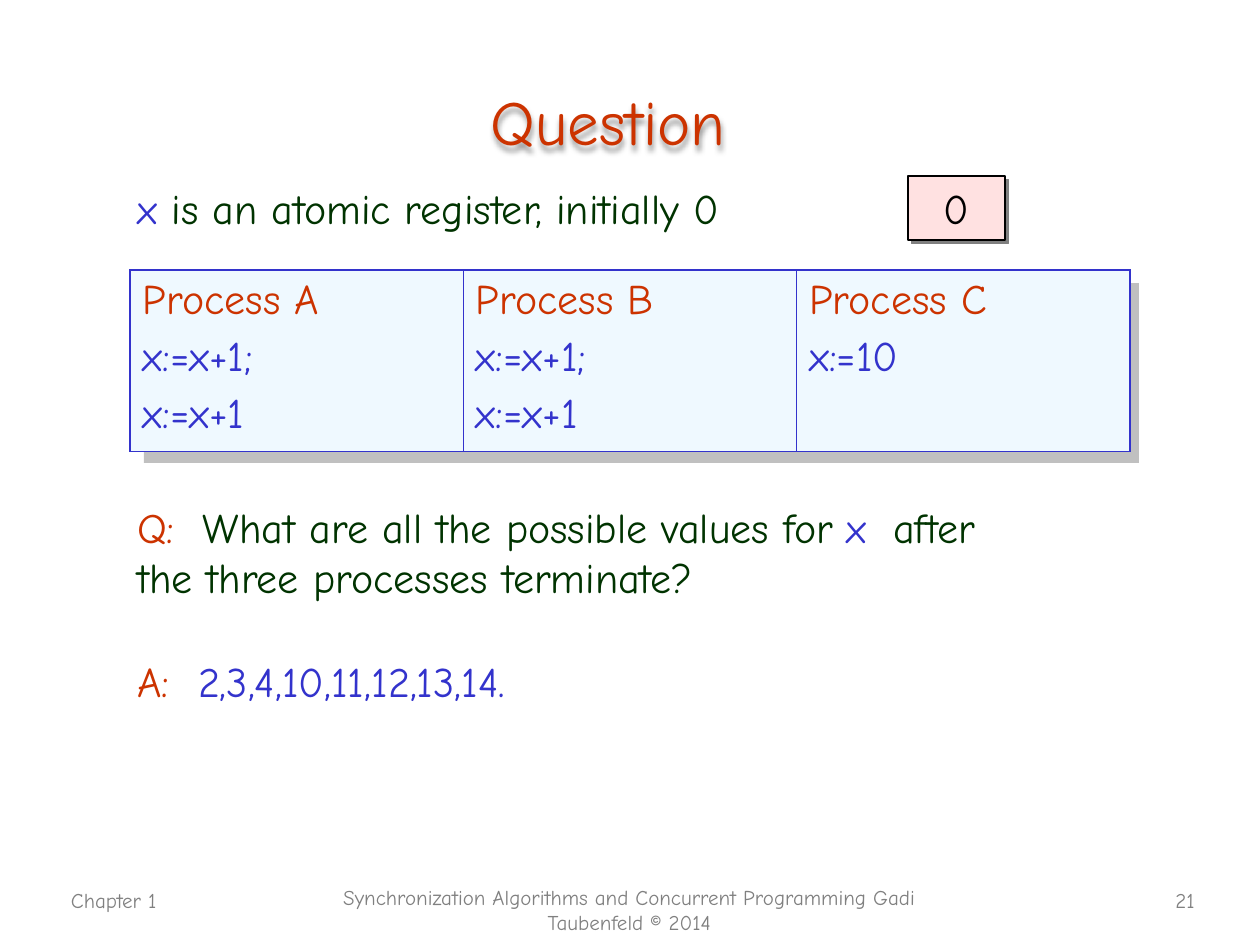
from dataclasses import dataclass
from lxml.etree import SubElement as Sub
from pptx import Presentation
from pptx.dml.color import RGBColor as Rgb
from pptx.enum.shapes import MSO_SHAPE as Kind
from pptx.enum.text import MSO_ANCHOR as Anchor, PP_ALIGN as Align
from pptx.oxml.ns import qn
from pptx.util import Pt


@dataclass(frozen=True)
class Theme:
    font: str = "Comic Neue"
    red: str = "CC3300"
    blue: str = "3333CC"
    green: str = "003300"
    gray: str = "808080"
    black: str = "000000"
    pale: str = "EFF9FF"
    pink: str = "FFE1E1"
    shade: str = "C0C0C0"
    head: int = 36
    body: int = 24
    small: int = 12


T = Theme()


def px(n):
    return round(n * 914400 / 126)


def write(par, parts, size=T.body, align=Align.LEFT, gap=0):
    par.alignment = align
    par.space_before = Pt(gap)
    for text, color in parts:
        run = par.add_run()
        run.text = text
        run.font.name = T.font
        run.font.size = Pt(size)
        run.font.color.rgb = Rgb.from_string(color)


def label(slide, box, parts, size=T.body, align=Align.LEFT, gap=0,
          inset=12, stops=(), anchor=Anchor.TOP):
    shape = slide.shapes.add_textbox(*map(px, box))
    frame = shape.text_frame
    frame.word_wrap = True
    frame.vertical_anchor = anchor
    frame.margin_left = px(inset)
    par = frame.paragraphs[0]
    write(par, parts, size, align, gap)
    if stops:
        tabs = Sub(par._p.get_or_add_pPr(), qn("a:tabLst"))
        for stop in stops:
            Sub(tabs, qn("a:tab"), pos=str(px(stop)), algn="l")
    return shape


def block(slide, box, fill):
    shape = slide.shapes.add_shape(Kind.RECTANGLE, *map(px, box))
    shape.shadow.inherit = False
    shape.fill.solid()
    shape.fill.fore_color.rgb = Rgb.from_string(fill)
    shape.line.fill.background()
    return shape


def shadow(shape, color, blur, dist, angle, alpha):
    shape.shadow.inherit = False
    effects = shape._element.spPr.find(qn("a:effectLst"))
    outer = Sub(effects, qn("a:outerShdw"), blurRad=str(Pt(blur)),
                dist=str(Pt(dist)), dir=str(angle * 60000),
                algn="ctr", rotWithShape="0")
    tone = Sub(outer, qn("a:srgbClr"), val=color)
    Sub(tone, qn("a:alpha"), val=str(alpha * 1000))


def frame_cell(cell):
    props = cell._tc.get_or_add_tcPr()
    for side in ("lnL", "lnR", "lnT", "lnB"):
        line = Sub(props, qn("a:" + side), w=str(Pt(1)))
        Sub(Sub(line, qn("a:solidFill")), qn("a:srgbClr"), val=T.blue)
    cell.fill.solid()
    cell.fill.fore_color.rgb = Rgb.from_string(T.pale)


def title(slide, box):
    shape = label(slide, box, [("Question", T.red)], T.head,
                  Align.CENTER, anchor=Anchor.MIDDLE)
    shadow(shape, T.black, 3, 3, 90, 40)


def register(slide, box):
    x, y, w, h = box
    label(slide, (x, y, w, 55),
          [("x", T.blue), (" is an atomic register, initially 0", T.green)],
          gap=5)
    cell = block(slide, (x + 782, y, 97, h), T.pink)
    cell.line.color.rgb = Rgb.from_string(T.black)
    cell.line.width = Pt(0.75)
    shadow(cell, T.gray, 0, 2.8, 45, 100)
    cell.text_frame.vertical_anchor = Anchor.MIDDLE
    write(cell.text_frame.paragraphs[0], [("0", T.black)],
          align=Align.CENTER)


def programs(slide, box, plans):
    x, y, w, h = box
    block(slide, (x + 14, y + 13, w - 5, h + 6), T.shade)
    table = slide.shapes.add_table(1, len(plans), *map(px, box)).table
    table.first_row = table.horz_banding = False
    for i, (name, steps) in enumerate(plans):
        table.columns[i].width = px(w) // len(plans)
        cell = table.cell(0, i)
        frame_cell(cell)
        frame = cell.text_frame
        write(frame.paragraphs[0], [(name, T.red)], gap=5)
        for step in steps:
            write(frame.add_paragraph(), [(step, T.blue)], gap=5)


def quiz(slide, box):
    x, y, w, h = box
    label(slide, (x, y, w, h),
          [("Q:", T.red),
           ("\tWhat are all the possible values for ", T.green),
           ("x", T.blue),
           ("\tafter the three processes terminate?", T.green)],
          gap=5, inset=60, stops=(66, 756))
    label(slide, (x, y + 154, w, h),
          [("A:", T.red), ("\t2,3,4,10,11,12,13,14.", T.blue)],
          gap=5, inset=60, stops=(61,))


def footer(slide, box):
    x, y, w, h = box
    notes = (
        (0, 3, 262, "Chapter 1", Align.LEFT),
        (266, 0, 609, "Synchronization Algorithms and Concurrent "
         "Programming Gadi Taubenfeld © 2014", Align.CENTER),
        (w - 59, 3, 59, "21", Align.RIGHT),
    )
    for dx, dy, wide, text, align in notes:
        label(slide, (x + dx, y + dy, wide, h), [(text, T.gray)],
              T.small, align)


def main():
    deck = Presentation()
    deck.slide_width, deck.slide_height = px(1260), px(945)
    slide = deck.slides.add_slide(deck.slide_layouts[6])
    twice = ("x:=x+1;", "x:=x+1")
    title(slide, (73, 62, 1071, 117))
    programs(slide, (130, 270, 1000, 174),
             (("Process A", twice), ("Process B", twice),
              ("Process C", ("x:=10",))))
    register(slide, (126, 176, 994, 64))
    quiz(slide, (77, 495, 975, 122))
    footer(slide, (59, 878, 1148, 63))
    deck.save("out.pptx")


if __name__ == "__main__":
    main()
